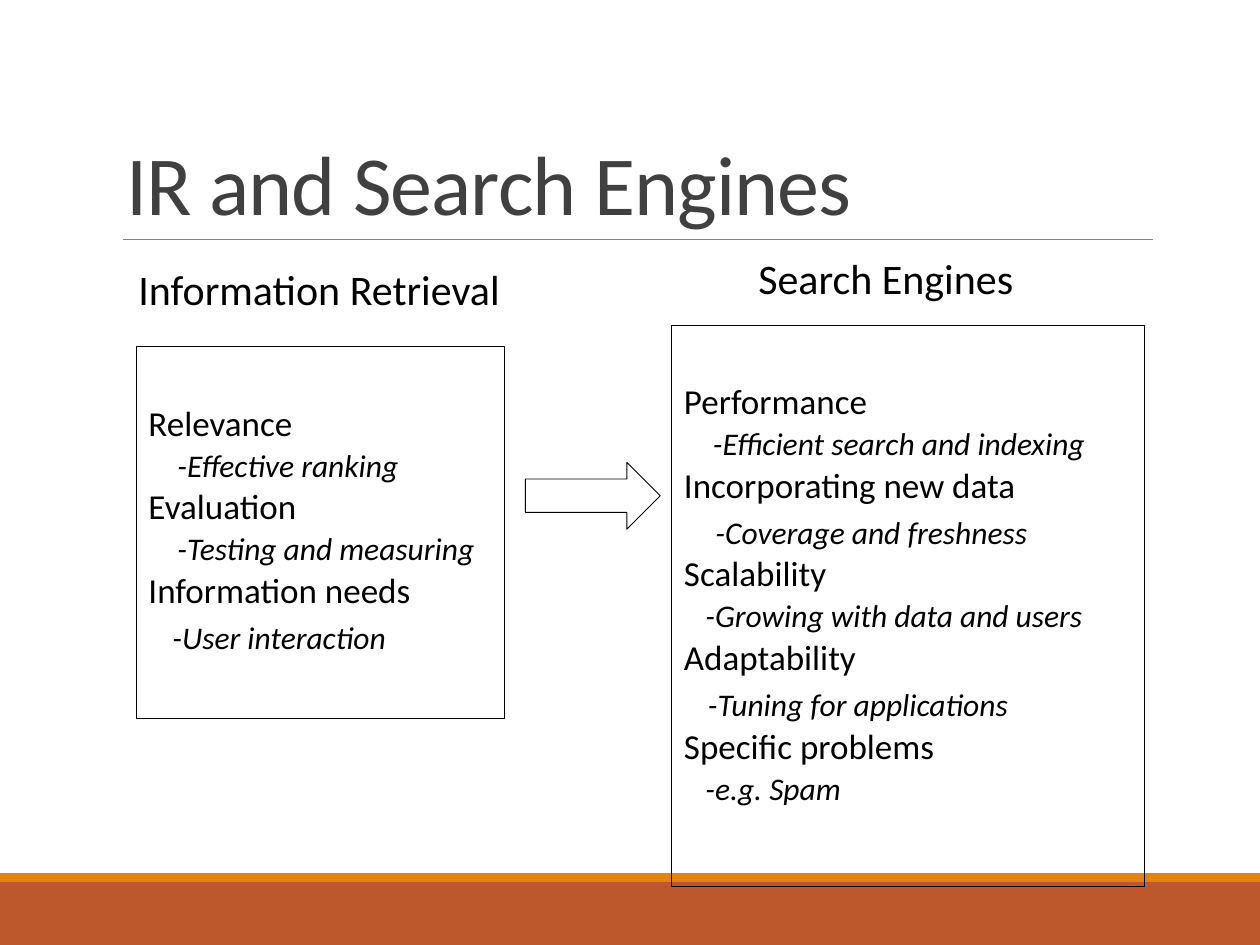
from dataclasses import dataclass

from pptx import Presentation
from pptx.dml.color import RGBColor
from pptx.enum.shapes import MSO_CONNECTOR, MSO_SHAPE
from pptx.enum.text import MSO_ANCHOR, MSO_AUTO_SIZE, PP_ALIGN
from pptx.oxml.ns import qn
from pptx.util import Inches, Pt

RECTANGLE = MSO_SHAPE.RECTANGLE
RIGHT_ARROW = MSO_SHAPE.RIGHT_ARROW
STRAIGHT = MSO_CONNECTOR.STRAIGHT
LEFT = PP_ALIGN.LEFT
TOP, BOTTOM = MSO_ANCHOR.TOP, MSO_ANCHOR.BOTTOM
NO_AUTOFIT = MSO_AUTO_SIZE.NONE

BLACK = RGBColor(0x00, 0x00, 0x00)
DARK_GREY = RGBColor(0x40, 0x40, 0x40)
RULE_GREY = RGBColor(0x80, 0x80, 0x80)
RUST = RGBColor(0xBD, 0x58, 0x2C)
ORANGE = RGBColor(0xE4, 0x83, 0x12)

FONT = "Calibri"
LINE_SPACING = 0.65
TOPIC_FORMAT = {"size": Pt(20), "italic": False}
DETAIL_FORMAT = {"size": Pt(18), "italic": True}


@dataclass(frozen=True)
class Area:
    left: float
    top: float
    width: float
    height: float

    def lengths(self):
        return [Inches(n) for n in (self.left, self.top, self.width, self.height)]


@dataclass(frozen=True)
class Topic:
    name: str
    detail: str
    indent: float
    gap: float = 9  # points above the detail


@dataclass(frozen=True)
class Column:
    heading: str
    heading_area: Area
    list_area: Area
    topics: tuple


BANDS = ((Area(0, 7, 10, 0.5), RUST), (Area(0, 6.93, 10, 0.07), ORANGE))

COLUMNS = (
    Column("Information Retrieval", Area(1, 2.17, 3.1, 0.39),
           Area(1.08, 2.75, 2.92, 2.95), (
               Topic("Relevance", "-Effective ranking", 0.23),
               Topic("Evaluation", "-Testing and measuring", 0.23),
               Topic("Information needs", "-User interaction", 0.19, 12))),
    Column("Search Engines", Area(5.92, 2.08, 2.25, 0.39),
           Area(5.33, 2.58, 3.75, 4.46), (
               Topic("Performance", "-Efficient search and indexing", 0.23),
               Topic("Incorporating new data", "-Coverage and freshness", 0.25, 12),
               Topic("Scalability", "-Growing with data and users", 0.17),
               Topic("Adaptability", "-Tuning for applications", 0.19, 12),
               Topic("Specific problems", "-e.g. Spam", 0.17))),
)


def add_span(para, text: str, color: RGBColor, **formats):
    span = para.add_run()
    span.text = text
    span.font.color.rgb = color
    for name, value in {"name": FONT, **formats}.items():
        setattr(span.font, name, value)
    return span


def add_outline(slide, kind, area: Area):
    """Add an unfilled shape with a thin black edge."""
    shape = slide.shapes.add_shape(kind, *area.lengths())
    shape.shadow.inherit = False
    shape.fill.background()
    shape.line.color.rgb = BLACK
    shape.line.width = Pt(0.5)
    return shape


def add_band(slide, area: Area, color: RGBColor) -> None:
    band = slide.shapes.add_shape(RECTANGLE, *area.lengths())
    band.shadow.inherit = False
    band.fill.solid()
    band.fill.fore_color.rgb = color
    band.line.fill.background()


def add_rule(slide) -> None:
    rule = slide.shapes.add_connector(
        STRAIGHT, Inches(0.98), Inches(1.9), Inches(9.15), Inches(1.9))
    rule.line.color.rgb = RULE_GREY
    rule.line.width = Pt(0.5)
    properties = rule._element.spPr
    properties.append(properties.makeelement(qn("a:effectLst"), {}))


def set_title(slide, text: str) -> None:
    title = slide.shapes.title
    title.left, title.top, title.width, title.height = Area(
        0.9, 0.31, 8.25, 1.59).lengths()
    frame = title.text_frame
    frame.auto_size = NO_AUTOFIT
    frame.vertical_anchor = BOTTOM
    para = frame.paragraphs[0]
    para.alignment = LEFT
    para.line_spacing = 0.85
    span = add_span(para, text, DARK_GREY, size=Pt(48))
    span.font._element.set("spc", "-50")


def add_heading(slide, text: str, area: Area) -> None:
    box = slide.shapes.add_textbox(*area.lengths())
    box.text_frame.word_wrap = False
    para = box.text_frame.paragraphs[0]
    para.alignment = LEFT
    para.line_spacing = LINE_SPACING
    add_span(para, text, BLACK, size=Pt(24))


def add_topic_list(slide, area: Area, topics: tuple) -> None:
    frame = add_outline(slide, RECTANGLE, area).text_frame
    frame.word_wrap = True
    frame.vertical_anchor = TOP
    frame.margin_top = Inches(0.54)
    lines = []
    for topic in topics:
        lines.append((topic.name, 0, 9, TOPIC_FORMAT))
        lines.append((topic.detail, topic.indent, topic.gap, DETAIL_FORMAT))
    for index, (text, indent, gap, formats) in enumerate(lines):
        para = frame.add_paragraph() if index else frame.paragraphs[0]
        para.alignment = LEFT
        para.line_spacing = LINE_SPACING
        para.space_before = Pt(gap if index else 0)
        para._p.get_or_add_pPr().set("marL", str(Inches(indent)))
        add_span(para, text, BLACK, **formats)


def main() -> None:
    deck = Presentation()
    deck.slide_width, deck.slide_height = Inches(10), Inches(7.5)
    slide = deck.slides.add_slide(deck.slide_layouts[5])
    for area, color in BANDS:
        add_band(slide, area, color)
    add_rule(slide)
    set_title(slide, "IR and Search Engines")
    for column in COLUMNS:
        add_topic_list(slide, column.list_area, column.topics)
    add_outline(slide, RIGHT_ARROW, Area(4.17, 3.67, 1.07, 0.53))
    for column in COLUMNS:
        add_heading(slide, column.heading, column.heading_area)
    deck.save("out.pptx")


if __name__ == "__main__":
    main()
